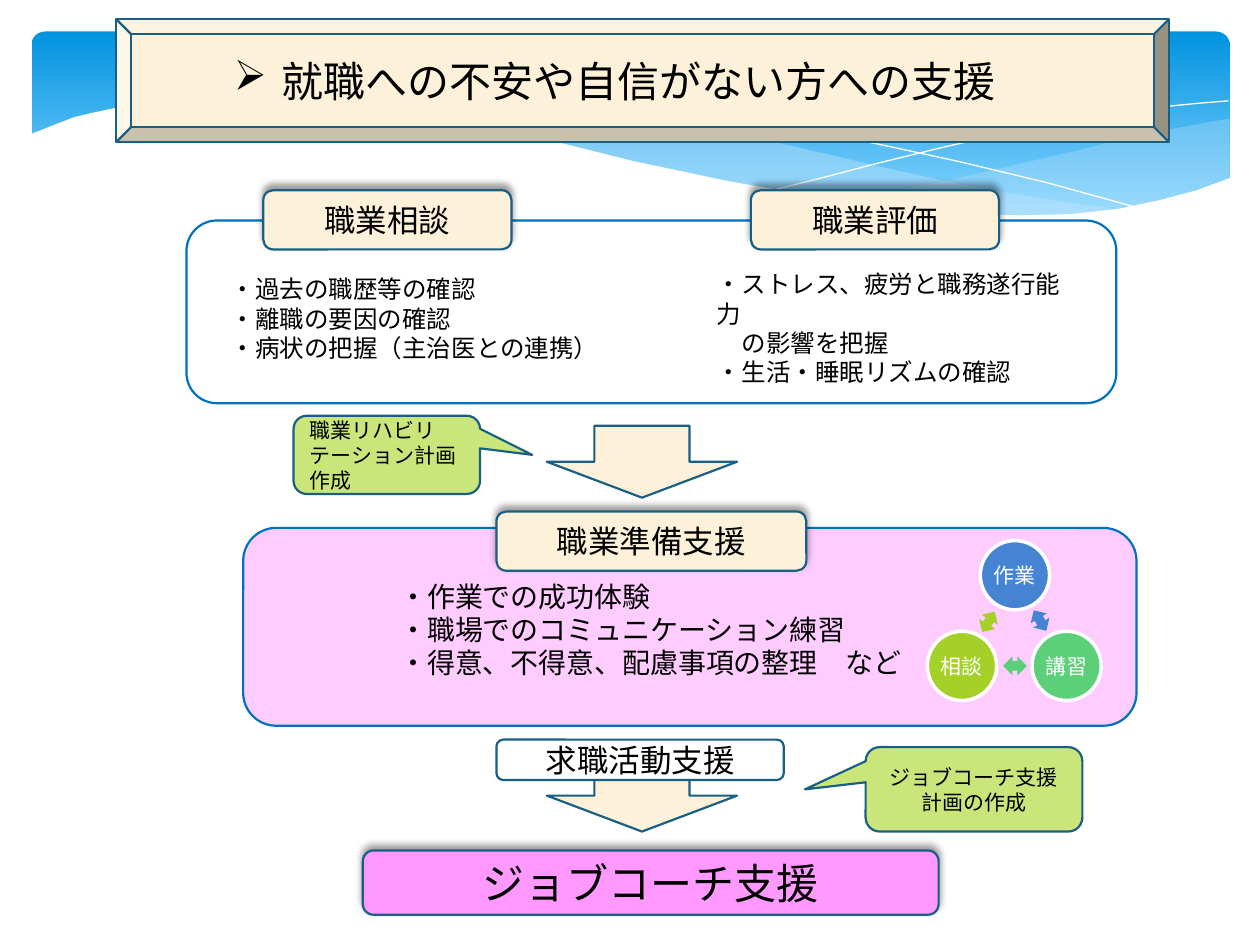
from lxml import etree
from pptx import Presentation
from pptx.dml.color import RGBColor
from pptx.enum.shapes import MSO_SHAPE as SHAPE
from pptx.enum.text import MSO_ANCHOR as ANCHOR, MSO_AUTO_SIZE as AUTO, PP_ALIGN as ALIGN
from pptx.oxml.ns import qn
from pptx.util import Pt

PX = 9144  # 100 px to the inch
JP, LATIN = "Noto Sans CJK JP", "Cabin"
BLACK = RGBColor(0x00, 0x00, 0x00)
WHITE = RGBColor(0xFF, 0xFF, 0xFF)
CREAM = RGBColor(0xFD, 0xF2, 0xD9)
NAVY = RGBColor(0x19, 0x5F, 0x84)
BLUE = RGBColor(0x00, 0x70, 0xC0)
PALE_PINK = RGBColor(0xFF, 0xCC, 0xFF)
PINK = RGBColor(0xFF, 0x99, 0xFF)
LIME = RGBColor(0xCA, 0xE6, 0x7B)
SKY_TOP = RGBColor(0x02, 0x93, 0xE0)
SKY_LOW = RGBColor(0x83, 0xD3, 0xFE)
WAVE = RGBColor(0xC6, 0xE7, 0xFC)
CYCLE_BLUE = RGBColor(0x45, 0x84, 0xD3)
CYCLE_GREEN = RGBColor(0x5B, 0xD0, 0x78)
CYCLE_LIME = RGBColor(0xA5, 0xD0, 0x28)

prs = Presentation()
prs.slide_width, prs.slide_height = 1000 * PX, 750 * PX
s = prs.slides.add_slide(prs.slide_layouts[3])
shapes = s.shapes
title, left_list, right_list = s.placeholders


def add_box(kind, box, fill=None, line=None, width=1.25):
    sp = shapes.add_shape(kind, *[v * PX for v in box])
    sp.shadow.inherit = False
    if fill is None:
        sp.fill.background()
    else:
        sp.fill.solid()
        sp.fill.fore_color.rgb = fill
    if line is None:
        sp.line.fill.background()
    else:
        sp.line.color.rgb = line
        sp.line.width = Pt(width)
    return sp


def set_text(sp, text, size, align=ALIGN.CENTER, anchor=ANCHOR.MIDDLE, font=JP, color=BLACK):
    tf = sp.text_frame
    tf.text = text
    tf.word_wrap = True
    tf.auto_size = AUTO.NONE
    tf.vertical_anchor = anchor
    for p in tf.paragraphs:
        p.alignment = align
        p.line_spacing = Pt(round(size * 1.19, 1))
        p.space_before = Pt(0)
        for r in p.runs:
            r.font.size = Pt(size)
            r.font.name = font
            r.font.color.rgb = color
            etree.SubElement(r.font._element, qn("a:ea"), typeface=font)


# Sky banner
sky = add_box(SHAPE.ROUNDED_RECTANGLE, (25, 25, 951, 156), WHITE)
sky.adjustments[0] = 0.07
sky.fill.gradient()
sky.fill.gradient_angle = 270
for stop, color, position in zip(sky.fill.gradient_stops, (SKY_TOP, SKY_LOW), (0, 0.9)):
    stop.color.rgb = color
    stop.position = position

# Waves: points, fill, opacity in percent; without a fill it is a thin white line
waves = [
    ([(976, 94), (948, 99), (921, 104), (891, 110), (861, 118), (805, 131), (753, 143),
      (706, 152), (661, 160), (691, 164), (732, 168), (769, 171), (803, 172), (844, 171),
      (881, 167), (913, 162), (942, 154), (963, 147), (976, 141)], WAVE, 29),
    ([(893, 167), (837, 159), (775, 149), (706, 134), (629, 116), (584, 106), (541, 97),
      (502, 90), (465, 86), (420, 82), (380, 80), (344, 80), (313, 82), (286, 86),
      (323, 90), (362, 97), (404, 106), (449, 116), (530, 135), (601, 150), (665, 161),
      (722, 168), (773, 172), (818, 173), (857, 171), (893, 167)], WAVE, 40),
    ([(309, 90), (328, 86), (353, 84), (387, 82), (433, 82), (489, 84), (533, 88),
      (582, 94), (636, 103), (695, 114), (760, 128), (831, 145), (907, 166)], None, 100),
    ([(613, 151), (653, 141), (695, 130), (748, 117), (806, 104), (866, 93), (910, 86),
      (951, 82), (975, 80)], None, 100),
    ([(977, 141), (950, 151), (920, 159), (887, 166), (850, 170), (809, 171), (761, 170),
      (708, 165), (648, 156), (579, 144), (503, 128), (447, 114), (391, 102), (340, 92),
      (292, 85), (250, 81), (211, 78), (177, 78), (146, 79), (119, 82), (95, 85),
      (76, 89), (59, 93), (46, 98), (36, 102), (23, 107), (23, 224), (977, 224)], WHITE, 100),
]
for points, fill, opacity in waves:
    builder = shapes.build_freeform(*points[0], scale=PX)
    builder.add_line_segments(points[1:], close=fill is not None)
    wave = builder.convert_to_shape()
    wave.shadow.inherit = False
    if fill is None:
        wave.fill.background()
        wave.line.color.rgb = WHITE
        wave.line.width = Pt(0)
        continue
    wave.line.fill.background()
    wave.fill.solid()
    wave.fill.fore_color.rgb = fill
    color_xml = wave._element.spPr.find(".//" + qn("a:srgbClr"))
    etree.SubElement(color_xml, qn("a:alpha"), val=str(opacity * 1000))

# Title on its bevelled plate
add_box(SHAPE.BEVEL, (92, 15, 836, 98), CREAM, NAVY)
title.left, title.top, title.width, title.height = [v * PX for v in (102, 39, 772, 50)]
set_text(title, "就職への不安や自信がない方への支援", 24)
pPr = title.text_frame.paragraphs[0]._p.get_or_add_pPr()
pPr.set("marL", str(38 * PX))
pPr.set("indent", str(-38 * PX))
etree.SubElement(pPr, qn("a:buChar"), char="➢")
shapes._spTree.append(title._element)

# Panels and down arrows
add_box(SHAPE.ROUNDED_RECTANGLE, (148, 175, 738, 145), None, BLUE)
add_box(SHAPE.ROUNDED_RECTANGLE, (193, 419, 709, 157), PALE_PINK, BLUE)
for top in (338, 603):
    add_box(SHAPE.DOWN_ARROW, (434, top, 151, 57), CREAM, NAVY)

# Step labels: text, box, fill, size, shadow
labels = [
    ("職業相談", (209, 151, 197, 47), CREAM, 18, True),
    ("職業評価", (596, 151, 197, 47), CREAM, 18, True),
    ("職業準備支援", (394, 406, 246, 47), CREAM, 18, True),
    ("求職活動支援", (394, 587, 228, 32), WHITE, 18, False),
    ("ジョブコーチ支援", (288, 675, 457, 51), PINK, 24, True),
]
for text, box, fill, size, shadow in labels:
    label = add_box(SHAPE.ROUNDED_RECTANGLE, box, fill, NAVY)
    set_text(label, text, size)
    if shadow:
        effects = label._element.spPr.find(qn("a:effectLst"))
        outer = etree.SubElement(effects, qn("a:outerShdw"), blurRad=str(Pt(4)),
                                 dist=str(Pt(3)), dir="16200000", rotWithShape="0")
        black = etree.SubElement(outer, qn("a:srgbClr"), val="000000")
        etree.SubElement(black, qn("a:alpha"), val="40000")

# Lists
lists = [
    (left_list, (173, 213, 338, 81), 14,
     "・過去の職歴等の確認\n・離職の要因の確認\n・病状の把握（主治医との連携）"),
    (right_list, (559, 209, 315, 81), 14,
     "・ストレス、疲労と職務遂行能力　\n　の影響を把握\n・生活・睡眠リズムの確認"),
    (shapes.add_textbox(0, 0, 0, 0), (307, 455, 438, 91), 16,
     "・作業での成功体験\n・職場でのコミュニケーション練習\n・得意、不得意、配慮事項の整理　など"),
]
for sp, box, size, text in lists:
    sp.left, sp.top, sp.width, sp.height = [v * PX for v in box]
    set_text(sp, text, size, ALIGN.LEFT, ANCHOR.TOP)
    for p in sp.text_frame.paragraphs:
        pPr = p._p.get_or_add_pPr()
        pPr.set("marL", "0")
        pPr.set("indent", "0")
        etree.SubElement(pPr, qn("a:buNone"))
    shapes._spTree.append(sp._element)

# Plan callouts
callouts = [
    ("職業リハビリテーション計画作成", (233, 330, 148, 62), 0.78, ALIGN.LEFT),
    ("ジョブコーチ支援計画の作成", (687, 593, 172, 67), -0.78, ALIGN.CENTER),
]
for text, box, tip, align in callouts:
    callout = add_box(SHAPE.ROUNDED_RECTANGULAR_CALLOUT, box, LIME, NAVY)
    callout.adjustments[0], callout.adjustments[1] = tip, 0
    set_text(callout, text, 12, align)

# Cycle of three: text, circle corner, colour, arrow corner, arrow rotation
cycle = [
    ("作業", (778, 429), CYCLE_BLUE, (818, 483), 328.6),
    ("講習", (819, 501), CYCLE_GREEN, (798, 519), 270),
    ("相談", (736, 501), CYCLE_LIME, (777, 484), 31.5),
]
for text, corner, color, arrow_corner, rotation in cycle:
    circle = add_box(SHAPE.OVAL, (*corner, 55, 55), color, WHITE, 2)
    tf = circle.text_frame
    tf.margin_left = tf.margin_right = tf.margin_top = tf.margin_bottom = 2 * PX
    set_text(circle, text, 12, font=LATIN, color=WHITE)
    arrow = add_box(SHAPE.UP_DOWN_ARROW, (*arrow_corner, 15, 19), color)
    arrow.rotation = rotation

prs.save("out.pptx")
